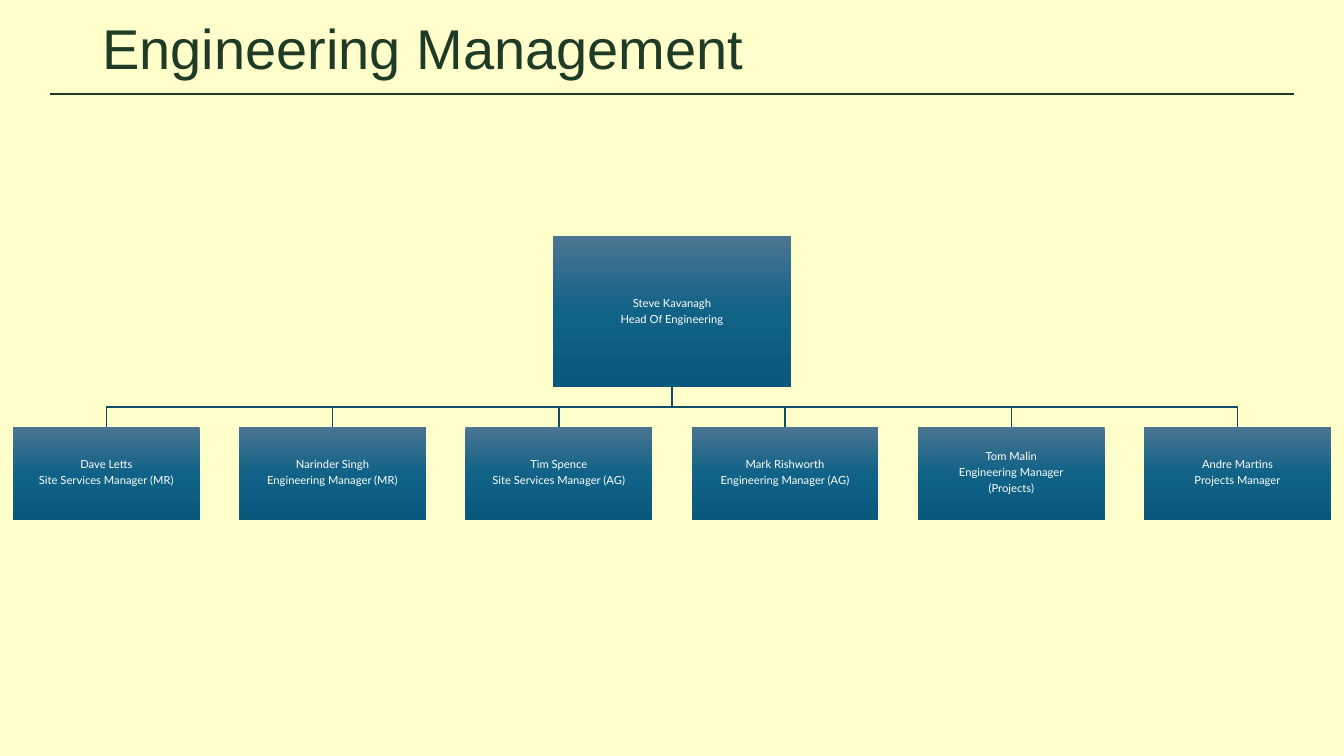
import copy

import pptx
import pptx.dml.color
import pptx.enum.shapes
import pptx.enum.text
import pptx.oxml
import pptx.util

Pt = pptx.util.Pt

HEAD = ["Steve Kavanagh", "Head Of Engineering"]
REPORTS = [
    ["Dave Letts", "Site Services Manager (MR)"],
    ["Narinder Singh", "Engineering Manager (MR)"],
    ["Tim Spence", "Site Services Manager (AG)"],
    ["Mark Rishworth", "Engineering Manager (AG)"],
    ["Tom Malin", "Engineering Manager", "(Projects)"],
    ["Andre Martins", "Projects Manager"],
]
GRADIENT = [(0, "4C7591"), (0.5, "106287"), (1, "09597D")]
HEAD_WIDTH, HEAD_HEIGHT = 170, 108
REPORT_WIDTH, REPORT_HEIGHT = 133.4, 66.7


def color(value):
    return pptx.dml.color.RGBColor.from_string(value)


def add_run(para, text, font, size, value):
    span = para.add_run()
    span.text = text
    span.font.name = font
    span.font.size = Pt(size)
    span.font.color.rgb = color(value)


def add_heading(page, text, left, top, width, height):
    rule = page.shapes.add_connector(
        pptx.enum.shapes.MSO_CONNECTOR.STRAIGHT,
        Pt(left), Pt(top + height), Pt(left + width), Pt(top + height))
    rule.line.color.rgb = color("203B25")
    rule.line.width = Pt(1.5)
    rule._element.spPr.append(pptx.oxml.parse_xml(
        '<a:effectLst xmlns:a="http://schemas.openxmlformats.org/drawingml/2006/main"/>'))

    box = page.shapes.add_textbox(Pt(left + 30.5), Pt(top), Pt(width - 61), Pt(height - 1.5))
    frame = box.text_frame
    frame.word_wrap = True
    frame.vertical_anchor = pptx.enum.text.MSO_ANCHOR.MIDDLE
    para = frame.paragraphs[0]
    para.line_spacing = 0.9
    add_run(para, text, "Arial", 40, "203B25")


def fill_gradient(shape):
    shape.fill.gradient()
    shape.fill.gradient_angle = 270
    stop_list = shape.fill._fill._gradFill.gsLst
    stop_list.append(copy.deepcopy(stop_list[-1]))
    for stop, (position, value) in zip(shape.fill.gradient_stops, GRADIENT):
        stop.position = position
        stop.color.rgb = color(value)


def add_person(page, lines, left, top, width, height):
    box = page.shapes.add_shape(
        pptx.enum.shapes.MSO_SHAPE.RECTANGLE, Pt(left), Pt(top), Pt(width), Pt(height))
    box.shadow.inherit = False
    box.line.fill.background()
    fill_gradient(box)
    frame = box.text_frame
    frame.word_wrap = True
    frame.vertical_anchor = pptx.enum.text.MSO_ANCHOR.MIDDLE
    frame.margin_left = frame.margin_right = Pt(0.4)
    frame.margin_top = frame.margin_bottom = Pt(0.4)
    for index, line in enumerate(lines):
        para = frame.add_paragraph() if index else frame.paragraphs[0]
        para.alignment = pptx.enum.text.PP_ALIGN.CENTER
        para.line_spacing = 0.9
        para.space_after = Pt(2.8)
        add_run(para, line, "Lato", 8, "FFFFFF")


def add_branch(page, start_x, start_y, end_x, end_y):
    middle = (start_y + end_y) / 2
    builder = page.shapes.build_freeform(Pt(start_x), Pt(start_y))
    builder.add_line_segments(
        [(Pt(x), Pt(y)) for x, y in
         [(start_x, middle), (end_x, middle), (end_x, end_y)]], close=False)
    branch = builder.convert_to_shape()
    branch.shadow.inherit = False
    branch.fill.background()
    branch.line.color.rgb = color("114D68")
    branch.line.width = Pt(1)


def add_organization(page, left, top, width, height):
    center = left + width / 2
    report_top = top + height - REPORT_HEIGHT
    pitch = (width - REPORT_WIDTH) / (len(REPORTS) - 1)
    report_lefts = [left + index * pitch for index in range(len(REPORTS))]
    for report_left in reversed(report_lefts):
        add_branch(page, center, top + HEAD_HEIGHT, report_left + REPORT_WIDTH / 2, report_top)
    add_person(page, HEAD, center - HEAD_WIDTH / 2, top, HEAD_WIDTH, HEAD_HEIGHT)
    for lines, report_left in zip(REPORTS, report_lefts):
        add_person(page, lines, report_left, report_top, REPORT_WIDTH, REPORT_HEIGHT)


def main():
    deck = pptx.Presentation()
    deck.slide_width, deck.slide_height = Pt(960), Pt(540)
    page = deck.slides.add_slide(deck.slide_layouts[6])
    page.background.fill.solid()
    page.background.fill.fore_color.rgb = color("FFFFCC")
    add_heading(page, "Engineering Management", 35.5, 7.9, 889, 59.1)
    add_organization(page, 9.3, 168.6, 941.4, 202.8)
    deck.save("out.pptx")


if __name__ == "__main__":
    main()
